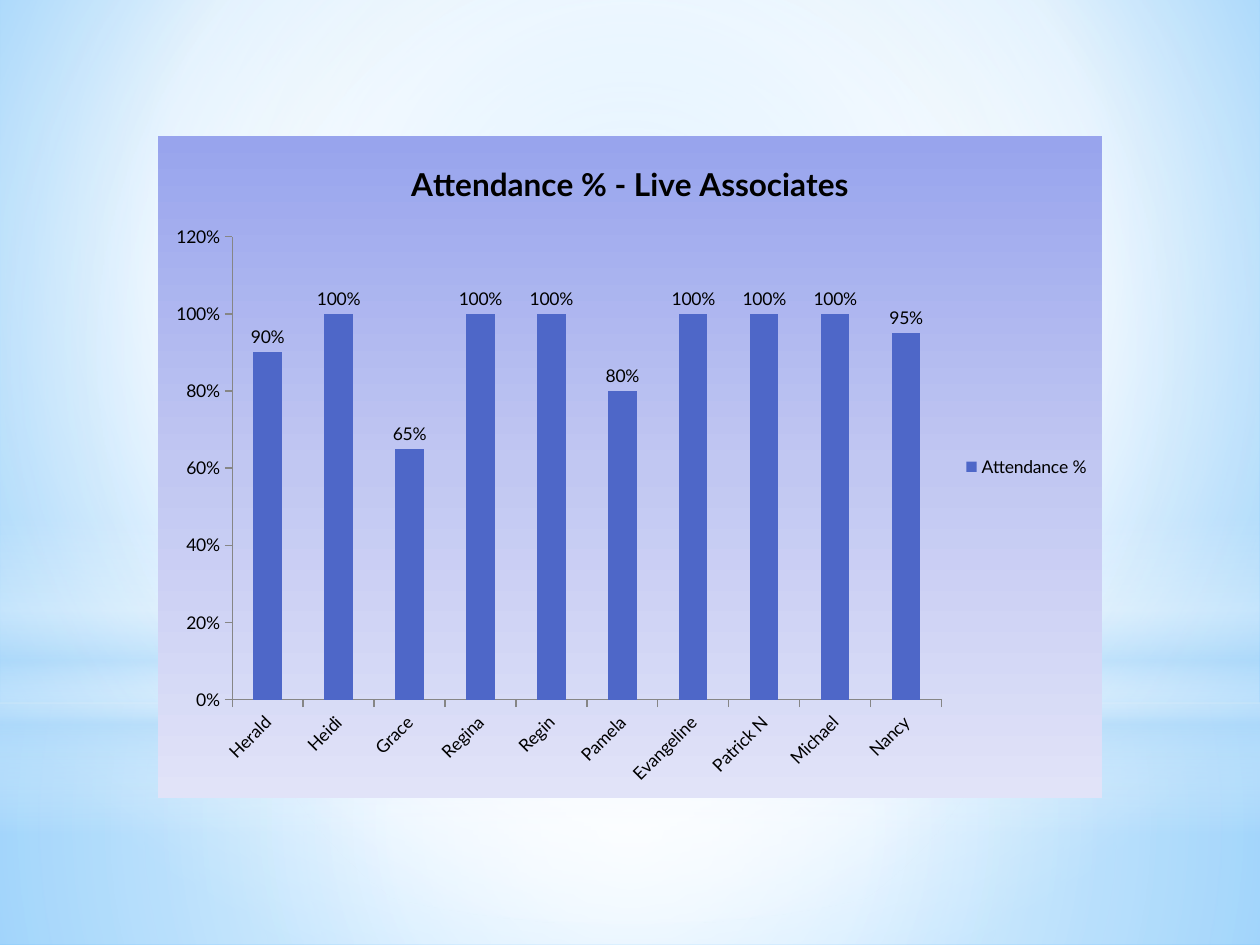
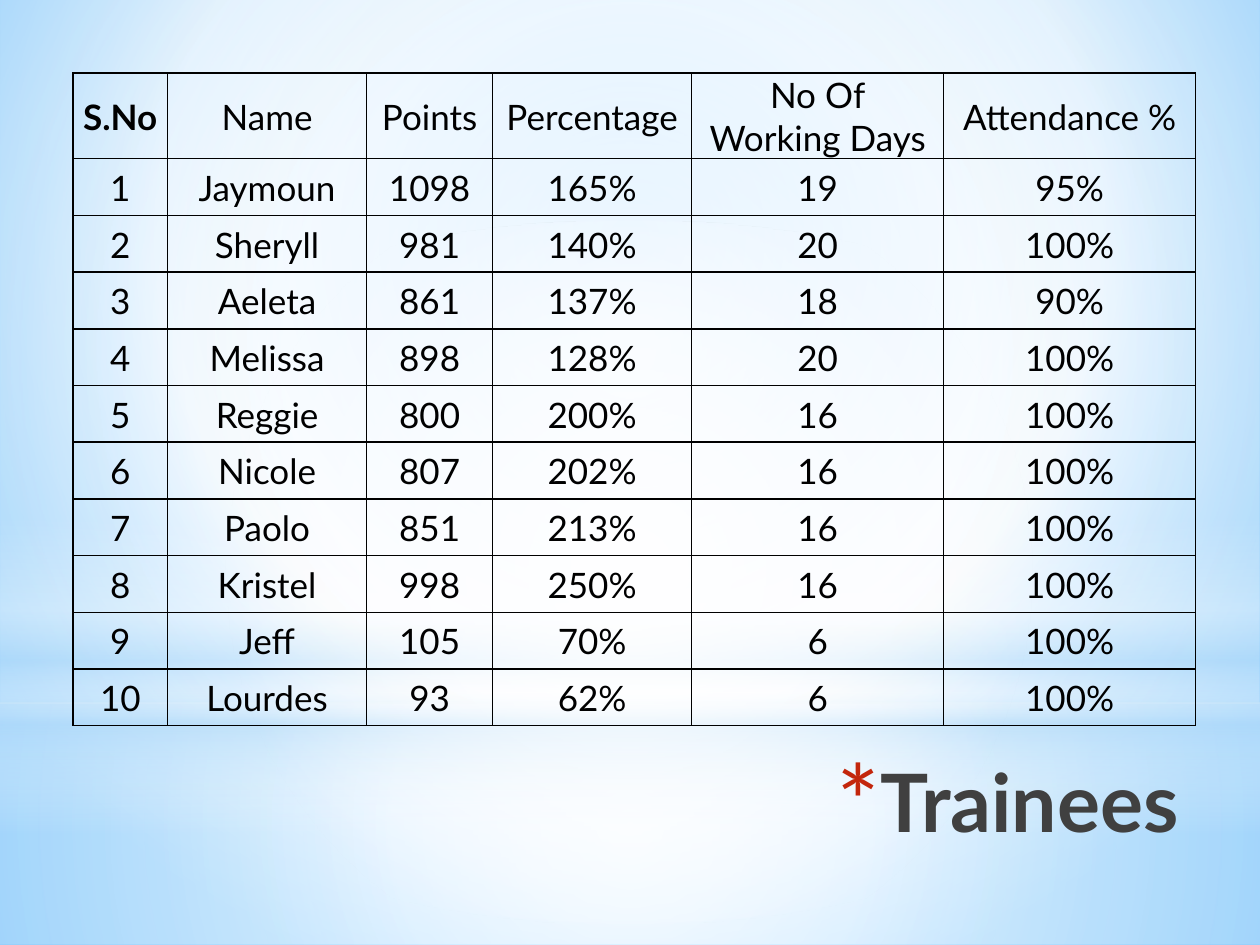
from pptx import Presentation
from pptx.chart.data import CategoryChartData
from pptx.dml.color import RGBColor
from pptx.enum.chart import XL_CHART_TYPE, XL_LABEL_POSITION, XL_LEGEND_POSITION, XL_TICK_MARK
from pptx.enum.shapes import MSO_SHAPE
from pptx.enum.text import MSO_ANCHOR, PP_ALIGN
from pptx.oxml import parse_xml
from pptx.oxml.ns import nsdecls, qn
from pptx.util import Inches, Pt

COLUMNS = XL_CHART_TYPE.COLUMN_CLUSTERED
LABEL_ABOVE = XL_LABEL_POSITION.OUTSIDE_END
LEGEND_RIGHT = XL_LEGEND_POSITION.RIGHT
TICK_OUTSIDE = XL_TICK_MARK.OUTSIDE
RECT, OVAL = MSO_SHAPE.RECTANGLE, MSO_SHAPE.OVAL
TOP, MIDDLE = MSO_ANCHOR.TOP, MSO_ANCHOR.MIDDLE
CENTER, RIGHT = PP_ALIGN.CENTER, PP_ALIGN.RIGHT

FONT = "Lato"
BLACK = RGBColor(0x00, 0x00, 0x00)
WHITE = RGBColor(0xFF, 0xFF, 0xFF)
CHARCOAL = RGBColor(0x40, 0x40, 0x40)
NAVY = RGBColor(0x21, 0x27, 0x45)
RED = RGBColor(0xC3, 0x26, 0x0C)
GREY = RGBColor(0x86, 0x86, 0x86)
SKY = RGBColor(0x9E, 0xD5, 0xFF)
DEEP_SKY = RGBColor(0x5B, 0xB9, 0xFF)
PALE_BLUE = RGBColor(0xB4, 0xDC, 0xFA)
BAR_BLUE = RGBColor(0x4E, 0x67, 0xC8)
CHART_TOP = RGBColor(0x98, 0xA4, 0xED)
CHART_MIDDLE = RGBColor(0xC1, 0xC7, 0xF2)
CHART_BOTTOM = RGBColor(0xE1, 0xE3, 0xF8)

CENTERED = (50, 50, 50, 50)
BACKDROP_STOPS = [(0, SKY, 100), (60, WHITE, 100), (100, DEEP_SKY, 100)]
BACKDROP_SHAPES = [
    (RECT, 5.58, 1.92, [(0, WHITE, 91), (37, WHITE, 76), (100, PALE_BLUE, 79)], CENTERED),
    (RECT, 0, 5.58, [(0, WHITE, 89), (48, WHITE, 62), (100, PALE_BLUE, 79)], CENTERED),
    (RECT, 4.12, 2.5, [(0, WHITE, 0), (29, WHITE, 30), (45, PALE_BLUE, 40),
                       (55, WHITE, 26), (65, PALE_BLUE, 60), (100, WHITE, 0)], None),
    (OVAL, 1.75, 5.58, [(0, WHITE, 100), (56, WHITE, 0)], CENTERED),
]

ATTENDANCE = {
    "Herald": 0.9, "Heidi": 1, "Grace": 0.65, "Regina": 1, "Regin": 1,
    "Pamela": 0.8, "Evangeline": 1, "Patrick N": 1, "Michael": 1, "Nancy": 0.95,
}

HEADERS = ["S.No", "Name", "Points", "Percentage", "No Of\nWorking Days", "Attendance %"]
TRAINEES = [
    ("Jaymoun", 1098, 165, 19, 95),
    ("Sheryll", 981, 140, 20, 100),
    ("Aeleta", 861, 137, 18, 90),
    ("Melissa", 898, 128, 20, 100),
    ("Reggie", 800, 200, 16, 100),
    ("Nicole", 807, 202, 16, 100),
    ("Paolo", 851, 213, 16, 100),
    ("Kristel", 998, 250, 16, 100),
    ("Jeff", 105, 70, 6, 100),
    ("Lourdes", 93, 62, 6, 100),
]
COLUMN_WIDTHS = [0.75, 1.58, 1, 1.58, 2, 2]
HEADER_HEIGHT, ROW_HEIGHT = 0.68, 0.45


def gradient(stops, focus=None):
    gs = "".join(
        f'<a:gs pos="{pos * 1000}"><a:srgbClr val="{color}">'
        f'<a:alpha val="{alpha * 1000}"/></a:srgbClr></a:gs>'
        for pos, color, alpha in stops)
    if focus:
        sides = " ".join(f'{side}="{v * 1000}"' for side, v in zip("ltrb", focus))
        way = f'<a:path path="circle"><a:fillToRect {sides}/></a:path>'
    else:
        way = '<a:lin ang="5400000" scaled="0"/>'
    return parse_xml(f'<a:gradFill {nsdecls("a")} rotWithShape="1">'
                     f'<a:gsLst>{gs}</a:gsLst>{way}</a:gradFill>')


def fill_gradient(fill, parent, stops, focus=None):
    fill.solid()
    fill.fore_color.rgb = WHITE
    parent.replace(parent.find(qn("a:solidFill")), gradient(stops, focus))


def set_font(font, size, bold=False, color=BLACK):
    font.name = FONT
    font.size = Pt(size)
    font.bold = bold
    font.color.rgb = color


def write_text(tf, text, size=20, bold=False, color=BLACK, align=CENTER):
    tf.word_wrap = True
    tf.text = text
    for p in tf.paragraphs:
        p.alignment = align
        for r in p.runs:
            set_font(r.font, size, bold, color)
    return tf.paragraphs[0]


def add_backdrop(s):
    fill = s.background.fill
    fill.solid()
    bg = s._element.cSld.find(qn("p:bg")).find(qn("p:bgPr"))
    fill_gradient(fill, bg, BACKDROP_STOPS, (20, 10, 20, 60))
    for kind, top, height, stops, focus in BACKDROP_SHAPES:
        sp = s.shapes.add_shape(kind, 0, Inches(top), Inches(10), Inches(height))
        sp.shadow.inherit = False
        sp.line.fill.background()
        fill_gradient(sp.fill, sp._element.spPr, stops, focus)


def add_slide(prs):
    s = prs.slides.add_slide(prs.slide_layouts[6])
    add_backdrop(s)
    return s


def style_axis(axis):
    axis.has_major_gridlines = False
    axis.major_tick_mark = TICK_OUTSIDE
    axis.format.line.color.rgb = GREY
    axis.format.line.width = Pt(0.75)
    set_font(axis.tick_labels.font, 10)


def add_attendance_chart(s):
    data = CategoryChartData(number_format="0%")
    data.categories = list(ATTENDANCE)
    data.add_series("Attendance %", list(ATTENDANCE.values()))
    chart = s.shapes.add_chart(COLUMNS, Inches(1.25), Inches(1.08),
                               Inches(7.5), Inches(5.25), data).chart
    set_font(chart.font, 10)
    panel = parse_xml(f'<c:spPr {nsdecls("c", "a")}><a:ln><a:noFill/></a:ln></c:spPr>')
    panel.insert(0, gradient([(0, CHART_TOP, 100), (50, CHART_MIDDLE, 100),
                              (100, CHART_BOTTOM, 100)]))
    chart._chartSpace.find(qn("c:txPr")).addprevious(panel)

    chart.has_title = True
    write_text(chart.chart_title.text_frame, "Attendance % - Live Associates", size=18, bold=True)
    chart.chart_title.include_in_layout = False
    chart.has_legend = True
    chart.legend.position = LEGEND_RIGHT
    chart.legend.include_in_layout = False
    set_font(chart.legend.font, 10)

    style_axis(chart.category_axis)
    chart.category_axis._element.find(qn("c:txPr")).find(qn("a:bodyPr")).set("rot", "-2700000")
    style_axis(chart.value_axis)
    chart.value_axis.minimum_scale = 0
    chart.value_axis.maximum_scale = 1.2
    chart.value_axis.major_unit = 0.2
    chart.value_axis.tick_labels.number_format = "0%"
    chart.value_axis.tick_labels.number_format_is_linked = False

    plot = chart.plots[0]
    plot.vary_by_categories = False
    plot.gap_width = 150
    fill = plot.series[0].format.fill
    fill.solid()
    fill.fore_color.rgb = BAR_BLUE
    plot.has_data_labels = True
    labels = plot.data_labels
    labels.show_value = True
    labels.number_format = "0%"
    labels.number_format_is_linked = False
    labels.position = LABEL_ABOVE
    set_font(labels.font, 10)


def add_title(s, text):
    tf = s.shapes.add_textbox(Inches(2.33), Inches(5.92), Inches(7.12), Inches(1.25)).text_frame
    tf.vertical_anchor = TOP
    p = write_text(tf, text, size=46, bold=True, align=RIGHT)
    font = p.runs[0].font
    fill_gradient(font.fill, p.runs[0]._r.rPr,
                  [(0, BLACK, 100), (40, CHARCOAL, 100), (100, NAVY, 65)])
    pPr = p._p.get_or_add_pPr()
    pPr.set("marL", str(Inches(0.35)))
    pPr.set("indent", str(-Inches(0.35)))
    for bullet in (f'<a:buClr {nsdecls("a")}><a:srgbClr val="{RED}"/></a:buClr>',
                   f'<a:buSzPct {nsdecls("a")} val="128000"/>',
                   f'<a:buFont {nsdecls("a")} typeface="{FONT}"/>',
                   f'<a:buChar {nsdecls("a")} char="*"/>'):
        pPr.append(parse_xml(bullet))


def style_cell(cell):
    cell.vertical_anchor = MIDDLE
    cell.margin_left = cell.margin_right = cell.margin_top = Inches(0.01)
    cell.margin_bottom = 0
    tcPr = cell._tc.get_or_add_tcPr()
    for side in ("lnL", "lnR", "lnT", "lnB"):
        tcPr.append(parse_xml(
            f'<a:{side} {nsdecls("a")} w="{Pt(1)}"><a:solidFill>'
            f'<a:srgbClr val="{BLACK}"/></a:solidFill></a:{side}>'))
    cell.fill.background()


def add_trainee_table(s):
    rows = [HEADERS] + [
        [str(number), name, str(points), f"{percentage}%", str(days), f"{attendance}%"]
        for number, (name, points, percentage, days, attendance) in enumerate(TRAINEES, 1)]
    heights = [HEADER_HEIGHT] + [ROW_HEIGHT] * len(TRAINEES)
    table = s.shapes.add_table(len(rows), len(HEADERS), Inches(0.58), Inches(0.58),
                               Inches(sum(COLUMN_WIDTHS)), Inches(sum(heights))).table
    table.first_row = table.horz_banding = False
    for column, width in zip(table.columns, COLUMN_WIDTHS):
        column.width = Inches(width)
    for row, height, texts in zip(table.rows, heights, rows):
        row.height = Inches(height)
        for cell, text in zip(row.cells, texts):
            style_cell(cell)
            write_text(cell.text_frame, text, bold=text == "S.No")


def main():
    prs = Presentation()
    prs.slide_width, prs.slide_height = Inches(10), Inches(7.5)
    add_attendance_chart(add_slide(prs))
    s = add_slide(prs)
    add_title(s, "Trainees")
    add_trainee_table(s)
    prs.save("out.pptx")


if __name__ == "__main__":
    main()
